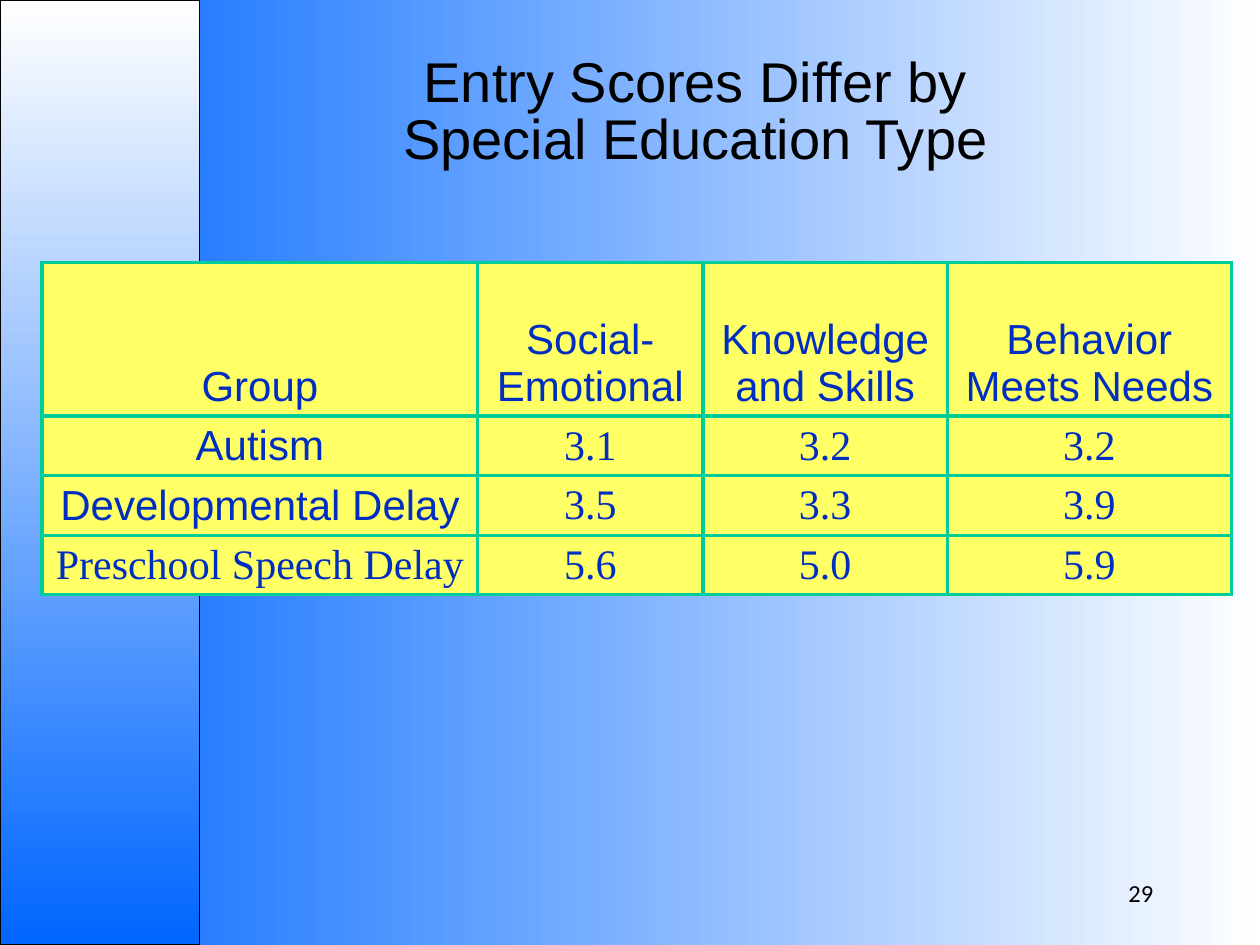
from copy import deepcopy

from lxml.etree import SubElement
from pptx import Presentation
from pptx.dml.color import RGBColor
from pptx.enum.shapes import MSO_SHAPE
from pptx.enum.text import MSO_ANCHOR, MSO_AUTO_SIZE, PP_ALIGN
from pptx.oxml.ns import qn
from pptx.util import Cm, Pt

BLACK = RGBColor(0x00, 0x00, 0x00)
WHITE = RGBColor(0xFF, 0xFF, 0xFF)
BLUE = RGBColor(0x00, 0x66, 0xFF)
TEXT_BLUE = RGBColor(0x00, 0x2E, 0xC0)
YELLOW = RGBColor(0xFF, 0xFF, 0x66)
GREEN = RGBColor(0x00, 0xCC, 0x99)

SANS, SERIF, NUMBER_FONT = "Arial", "Times New Roman", "Calibri"
HANGING = Cm(0.97)

COLUMN_WIDTHS = [8.78, 4.54, 4.93, 5.72]
ROW_HEIGHTS = [3.1, 1.2, 1.2, 1.2]
SCORES = [
    ["Group", "Social-Emotional", "Knowledge\nand Skills", "Behavior\nMeets Needs"],
    ["Autism", "3.1", "3.2", "3.2"],
    ["Developmental Delay", "3.5", "3.3", "3.9"],
    ["Preschool Speech Delay", "5.6", "5.0", "5.9"],
]
SANS_LABELS = SCORES[0] + ["Autism", "Developmental Delay"]


class SlideBuilder:
    def __init__(self, slide):
        self.slide = slide

    def gradient(self, fill, colors, angle):
        fill.gradient()
        fill.gradient_angle = angle
        for stop, color in zip(fill.gradient_stops, colors):
            stop.color.rgb = color

    def format_text(self, text_frame, font_name, size, color, alignment):
        for paragraph in text_frame.paragraphs:
            paragraph.alignment = alignment
            for run in paragraph.runs:
                run.font.name = font_name
                run.font.size = Pt(size)
                run.font.color.rgb = color

    def side_band(self, width, height):
        band = self.slide.shapes.add_shape(MSO_SHAPE.RECTANGLE, 0, 0, width, height)
        band.shadow.inherit = False
        self.gradient(band.fill, (WHITE, BLUE), 270)
        band.line.color.rgb = BLACK
        band.line.width = Pt(0.75)

    def title(self, text, left, top, width, height):
        title = self.slide.shapes.title
        title.left, title.top, title.width, title.height = left, top, width, height
        text_frame = title.text_frame
        text_frame.text = text
        text_frame.auto_size = MSO_AUTO_SIZE.NONE
        text_frame.vertical_anchor = MSO_ANCHOR.BOTTOM
        text_frame.margin_left = text_frame.margin_right = Cm(0.13)
        text_frame.margin_top = text_frame.margin_bottom = Cm(0.13)
        self.format_text(text_frame, SANS, 32, BLACK, PP_ALIGN.CENTER)
        paragraph = text_frame.paragraphs[0]
        paragraph.line_spacing = 0.85
        # Line breaks need the run size too, or they stretch the line.
        run_properties = paragraph.runs[0].font._element
        for line_break in title._element.iter(qn("a:br")):
            line_break.insert(0, deepcopy(run_properties))

    def cell_borders(self, cell):
        properties = cell._tc.get_or_add_tcPr()
        for side in ("lnL", "lnR", "lnT", "lnB"):
            line = SubElement(properties, qn(f"a:{side}"), w=str(Pt(2.25)))
            fill = SubElement(line, qn("a:solidFill"))
            SubElement(fill, qn("a:srgbClr"), val=str(GREEN))

    def cell(self, cell, text):
        self.cell_borders(cell)
        cell.fill.solid()
        cell.fill.fore_color.rgb = YELLOW
        cell.vertical_anchor = MSO_ANCHOR.BOTTOM
        cell.text_frame.text = text
        font_name = SANS if text in SANS_LABELS else SERIF
        self.format_text(cell.text_frame, font_name, 24, TEXT_BLUE, PP_ALIGN.CENTER)
        if text == "Social-Emotional":
            return
        for paragraph in cell.text_frame.paragraphs:
            properties = paragraph._p.get_or_add_pPr()
            properties.set("marL", str(HANGING))
            properties.set("indent", str(-HANGING))

    def table(self, rows, left, top):
        table = self.slide.shapes.add_table(
            len(rows), len(rows[0]), left, top,
            Cm(sum(COLUMN_WIDTHS)), Cm(sum(ROW_HEIGHTS)),
        ).table
        for column, width in zip(table.columns, COLUMN_WIDTHS):
            column.width = Cm(width)
        for row, height, texts in zip(table.rows, ROW_HEIGHTS, rows):
            row.height = Cm(height)
            for cell, text in zip(row.cells, texts):
                self.cell(cell, text)

    def page_number(self, text, left, top, width, height):
        text_frame = self.slide.shapes.add_textbox(left, top, width, height).text_frame
        text_frame.word_wrap = True
        text_frame.vertical_anchor = MSO_ANCHOR.MIDDLE
        text_frame.text = text
        self.format_text(text_frame, NUMBER_FONT, 14, BLACK, PP_ALIGN.RIGHT)


def main():
    presentation = Presentation()
    presentation.slide_width, presentation.slide_height = Cm(25.4), Cm(19.05)
    slide = presentation.slides.add_slide(presentation.slide_layouts[5])
    builder = SlideBuilder(slide)
    builder.gradient(slide.background.fill, (BLUE, WHITE), 0)
    builder.side_band(Cm(4.02), presentation.slide_height)
    builder.title("Entry Scores Differ by\vSpecial Education Type",
                  Cm(4.88), Cm(1.27), Cm(18.29), Cm(2.31))
    builder.table(SCORES, Cm(0.85), Cm(5.29))
    builder.page_number("29", Cm(18.2), Cm(17.36), Cm(5.3), Cm(1.27))
    presentation.save("out.pptx")


if __name__ == "__main__":
    main()
